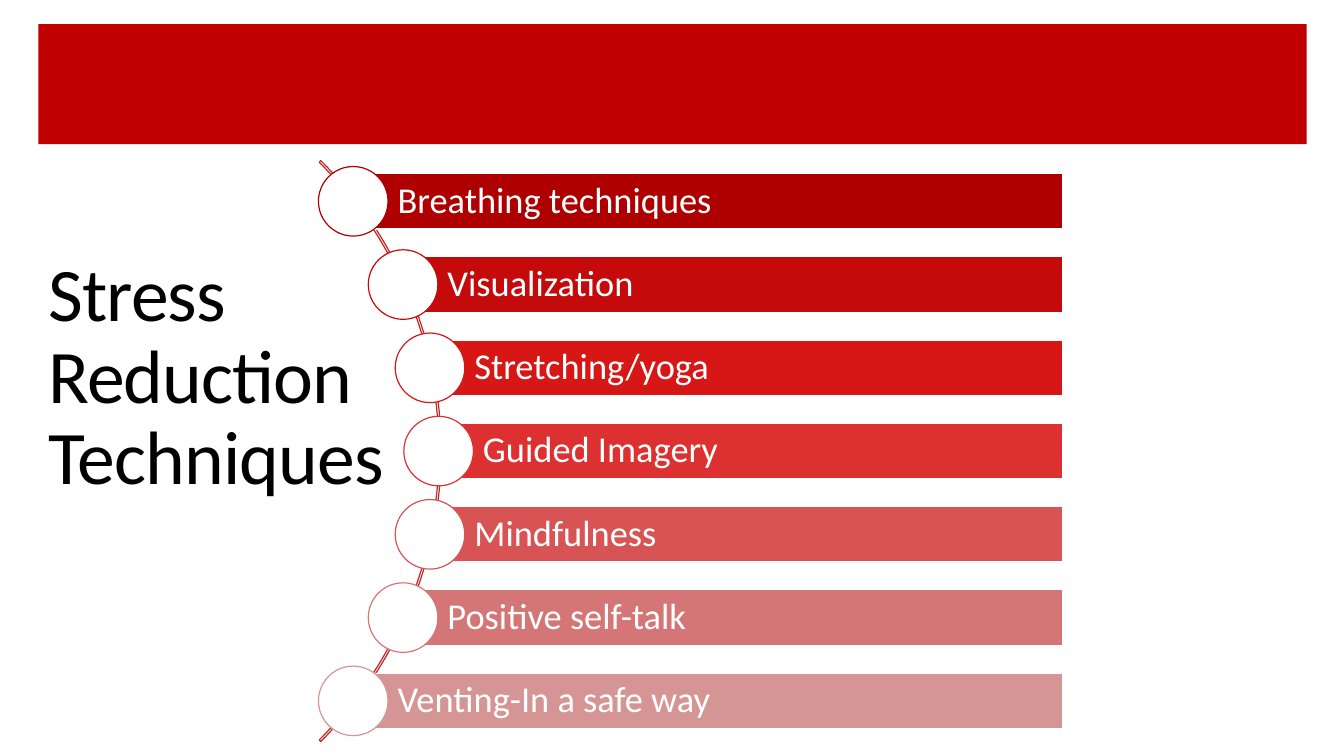
from math import sqrt

from pptx import Presentation
from pptx.dml.color import RGBColor
from pptx.enum.shapes import MSO_SHAPE
from pptx.enum.text import MSO_ANCHOR, PP_ALIGN
from pptx.util import Inches, Pt

WHITE = RGBColor(0xFF, 0xFF, 0xFF)
BLACK = RGBColor(0x00, 0x00, 0x00)
BANNER_RED = RGBColor(0xC0, 0x00, 0x00)
ARC_RED = RGBColor(0xC1, 0x22, 0x22)
FONT = "Calibri"

TECHNIQUES = [
    ("Breathing techniques", RGBColor(0xAE, 0x00, 0x00)),
    ("Visualization", RGBColor(0xC4, 0x0A, 0x0A)),
    ("Stretching/yoga", RGBColor(0xD7, 0x16, 0x16)),
    ("Guided Imagery", RGBColor(0xDD, 0x30, 0x30)),
    ("Mindfulness", RGBColor(0xD8, 0x54, 0x54)),
    ("Positive self-talk", RGBColor(0xD5, 0x76, 0x76)),
    ("Venting-In a safe way", RGBColor(0xD6, 0x95, 0x95)),
]


def add_part(page, kind, left, top, width, height, fill=None, line=None):
    part = page.shapes.add_shape(
        kind, Inches(left), Inches(top), Inches(width), Inches(height))
    part.shadow.inherit = False
    if fill is None:
        part.fill.background()
    else:
        part.fill.solid()
        part.fill.fore_color.rgb = fill
    if line is None:
        part.line.fill.background()
    else:
        part.line.color.rgb = line
        part.line.width = Pt(0.85)
    return part


def write_text(box, text, size, color):
    frame = box.text_frame
    frame.word_wrap = True
    frame.vertical_anchor = MSO_ANCHOR.MIDDLE
    para = frame.paragraphs[0]
    para.alignment = PP_ALIGN.LEFT
    para.line_spacing = 0.9
    span = para.add_run()
    span.text = text
    span.font.name = FONT
    span.font.size = Pt(size)
    span.font.color.rgb = color
    return span


def add_banner(page, left, top, width, height):
    add_part(page, MSO_SHAPE.RECTANGLE, left, top, width, height, BANNER_RED)


def add_title(page, left, top, width, height):
    box = page.shapes.add_textbox(
        Inches(left), Inches(top), Inches(width), Inches(height))
    span = write_text(box, "Stress Reduction Techniques", 54, BLACK)
    span.font._element.set("spc", "-60")  # slightly tightened letters


def add_curved_list(page, left, top, width, height):
    middle = top + height / 2
    center_x = left - 2.85
    arc_size, track_radius = 8.15, 4.05
    pitch, bar_height, dot_size = 0.826, 0.55, 0.69

    # Thin arc behind the dots, from 315 to 45 degrees
    arc = add_part(page, MSO_SHAPE.BLOCK_ARC, center_x - arc_size / 2,
                   middle - arc_size / 2, arc_size, arc_size, line=ARC_RED)
    arc.adjustments[0] = 189
    arc.adjustments[1] = 27
    arc.adjustments[2] = 0.00265

    # Each bar starts where its row meets the arc
    for row, (name, color) in enumerate(TECHNIQUES):
        offset = (row - (len(TECHNIQUES) - 1) / 2) * pitch
        x = center_x + sqrt(track_radius ** 2 - offset ** 2)
        y = middle + offset
        bar = add_part(page, MSO_SHAPE.RECTANGLE, x, y - bar_height / 2,
                       left + width - x, bar_height, color, WHITE)
        frame = bar.text_frame
        frame.margin_left = Inches(0.44)
        frame.margin_top = frame.margin_right = frame.margin_bottom = Inches(0.07)
        write_text(bar, name, 26, WHITE)
        add_part(page, MSO_SHAPE.OVAL, x - dot_size / 2, y - dot_size / 2,
                 dot_size, dot_size, WHITE, color)


def main():
    deck = Presentation()
    deck.slide_width = Inches(13.33)
    deck.slide_height = Inches(7.5)
    page = deck.slides.add_slide(deck.slide_layouts[6])
    add_banner(page, 0.38, 0.24, 12.58, 1.19)
    add_title(page, 0.38, 0.7, 3.74, 6.11)
    add_curved_list(page, 3.15, 1.65, 7.39, 5.65)
    deck.save("out.pptx")


if __name__ == "__main__":
    main()
